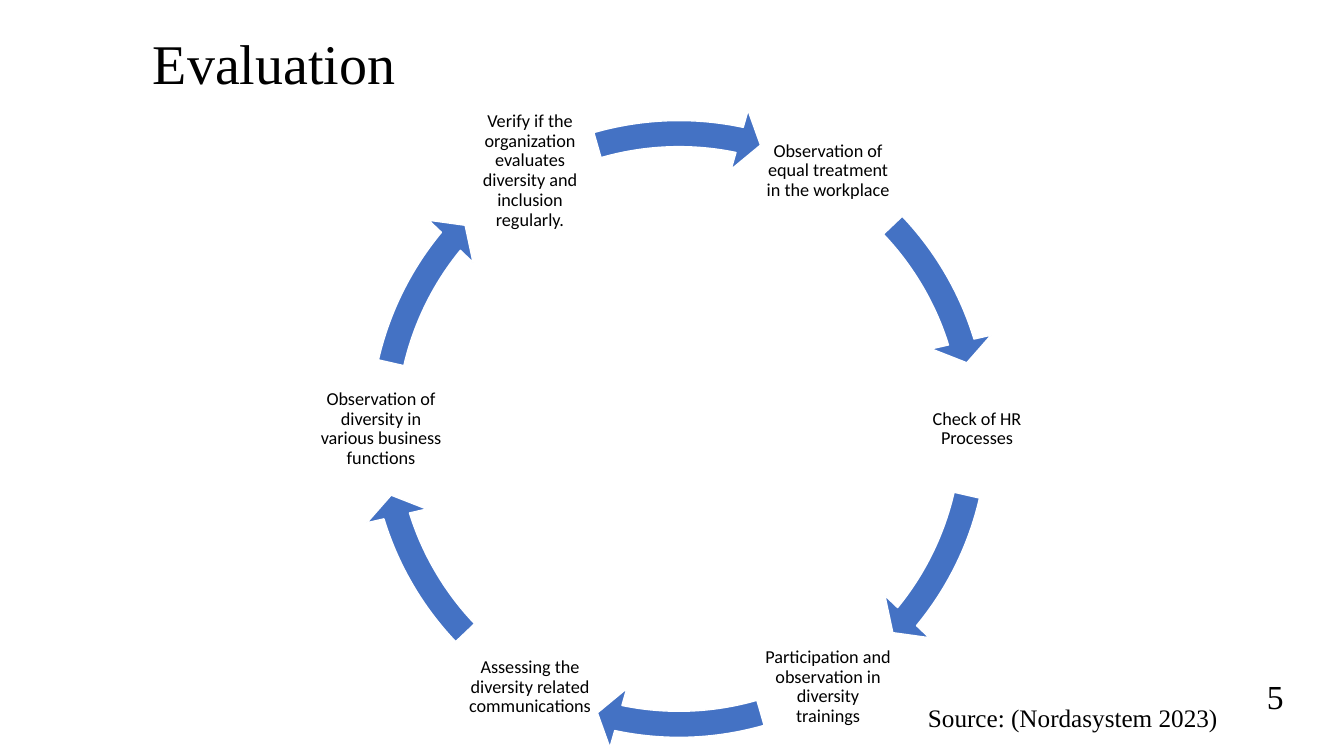
import math

from pptx import Presentation
from pptx.dml.color import RGBColor
from pptx.enum.shapes import MSO_SHAPE
from pptx.enum.text import MSO_ANCHOR, MSO_AUTO_SIZE, PP_ALIGN
from pptx.util import Emu, Pt

CIRCULAR_ARROW = MSO_SHAPE.CIRCULAR_ARROW
LEFT, CENTER = PP_ALIGN.LEFT, PP_ALIGN.CENTER
TOP, MIDDLE = MSO_ANCHOR.TOP, MSO_ANCHOR.MIDDLE
NO_AUTOFIT = MSO_AUTO_SIZE.NONE

COLORS = {"text": "000000", "arrow": "4472C4", "outline": "FFFFFF"}
SERIF, SANS = "Times New Roman", "Calibri"


def px(*lengths):
    """Turn pixels (100.8 to the inch) into EMU."""
    return [Emu(round(length * 914400 / 100.8)) for length in lengths]


def write_text(shape, text, size, font=SERIF, align=LEFT, anchor=TOP,
               margins=(10, 5, 10, 5), spacing=1.0, wrap=True):
    frame = shape.text_frame
    frame.auto_size = NO_AUTOFIT
    frame.word_wrap = wrap
    frame.vertical_anchor = anchor
    (frame.margin_left, frame.margin_top,
     frame.margin_right, frame.margin_bottom) = px(*margins)
    paragraph = frame.paragraphs[0]
    paragraph.alignment = align
    paragraph.line_spacing = spacing
    run = paragraph.add_run()
    run.text = text
    run.font.size = Pt(size)
    run.font.name = font
    run.font.color.rgb = RGBColor.from_string(COLORS["text"])


presentation = Presentation()
presentation.slide_width, presentation.slide_height = px(1344, 756)
slide = presentation.slides.add_slide(presentation.slide_layouts[5])

title = slide.shapes.title
title.left, title.top, title.width, title.height = px(101, 0, 425, 133)
write_text(title, "Evaluation", 40, anchor=MIDDLE,
           margins=(52, 5, 10, 5), spacing=0.9)

# Cycle: six labels 60 degrees apart, each followed by an arrow
CENTER_X, CENTER_Y = 679, 429
LABEL_RADIUS, LABEL_SIZE, RING_SIZE = 298, 133, 652
steps = [
    "Observation of equal treatment in the workplace",
    "Check of HR Processes",
    "Participation and observation in diversity trainings",
    "Assessing the diversity related communications",
    "Observation of diversity in various business functions",
    "Verify if the organization evaluates diversity and inclusion regularly.",
]
# Start and end angles in degrees; opposite arrows are half a turn apart
arrow_angles = [(316.39, 342.88), (12.95, 39.44), (73.98, 101.85)]
ADJUSTMENT_PER_DEGREE = 0.6

for index, step in enumerate(steps):
    angle = math.radians(60 * (index - 1))
    label = slide.shapes.add_textbox(*px(
        CENTER_X + LABEL_RADIUS * math.cos(angle) - LABEL_SIZE / 2,
        CENTER_Y + LABEL_RADIUS * math.sin(angle) - LABEL_SIZE / 2,
        LABEL_SIZE, LABEL_SIZE))
    write_text(label, step, 13, font=SANS, align=CENTER, anchor=MIDDLE,
               margins=(2, 2, 2, 2), spacing=0.9)

    arrow = slide.shapes.add_shape(CIRCULAR_ARROW, *px(
        CENTER_X - RING_SIZE / 2, CENTER_Y - RING_SIZE / 2,
        RING_SIZE, RING_SIZE))
    half_turn = 180 * (index // 3)
    start, end = [(degrees + half_turn) % 360
                  for degrees in arrow_angles[index % 3]]
    adjustments = [0.04, 4.17 * ADJUSTMENT_PER_DEGREE,
                   end * ADJUSTMENT_PER_DEGREE,
                   start * ADJUSTMENT_PER_DEGREE, 0.047]
    for position, value in enumerate(adjustments):
        arrow.adjustments[position] = value
    arrow.shadow.inherit = False
    arrow.fill.solid()
    arrow.fill.fore_color.rgb = RGBColor.from_string(COLORS["arrow"])
    arrow.line.color.rgb = RGBColor.from_string(COLORS["outline"])
    arrow.line.width = Pt(1)

page_number = slide.shapes.add_textbox(*px(1257, 671, 37, 50))
write_text(page_number, "5", 24, wrap=False)

source = slide.shapes.add_textbox(*px(918, 697, 310, 72))
write_text(source, "Source: (Nordasystem 2023)", 18, wrap=False)

presentation.save("out.pptx")
